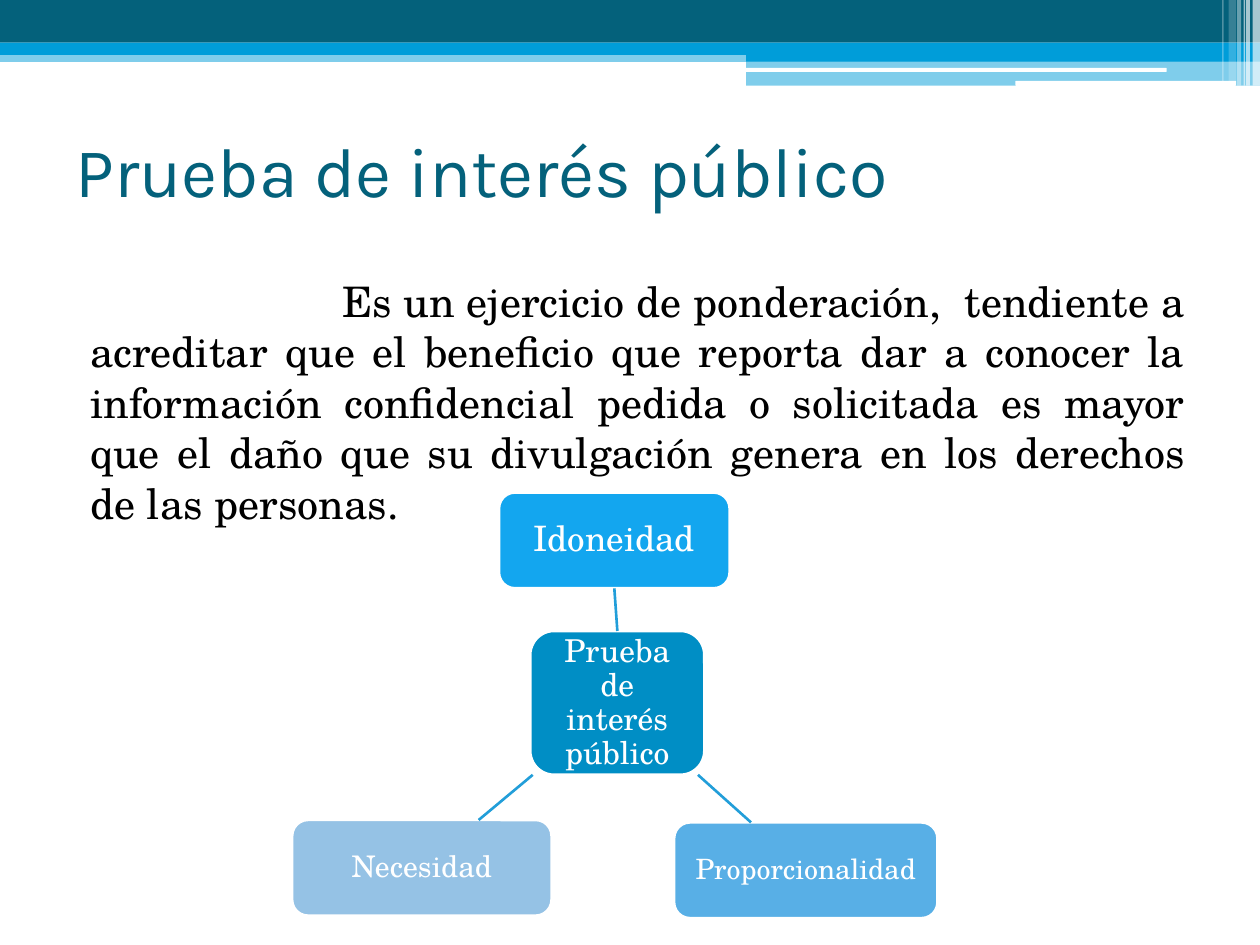
from dataclasses import dataclass

from lxml.etree import SubElement
from pptx import Presentation
from pptx.dml.color import RGBColor
from pptx.enum.shapes import MSO_CONNECTOR as Line, MSO_SHAPE as Shape
from pptx.enum.text import MSO_ANCHOR as Anchor, MSO_AUTO_SIZE as AutoSize, PP_ALIGN as Align
from pptx.oxml.ns import qn
from pptx.util import Cm, Pt


@dataclass(frozen=True)
class Theme:
    dark: str = "04617B"
    bright: str = "009DD9"
    white: str = "FFFFFF"
    ink: str = "000000"
    hub: str = "008EC5"
    suitability: str = "13A6EF"
    proportionality: str = "58AFE6"
    necessity: str = "95C2E5"
    link: str = "229ED9"
    heading_font: str = "Karla"
    body_font: str = "TeX Gyre Schola"
    title_size: int = 40
    body_size: int = 24
    line_width: float = 1.5


THEME = Theme()


def write(frame, text, *, size, color, font=THEME.body_font, align=Align.LEFT,
          anchor=Anchor.TOP, inset=None, line_spacing=None, before=0):
    frame.word_wrap = True
    frame.auto_size = AutoSize.NONE
    frame.vertical_anchor = anchor
    if inset is not None:
        frame.margin_left = frame.margin_right = Cm(inset)
        frame.margin_top = frame.margin_bottom = Cm(inset)
    paragraph = frame.paragraphs[0]
    paragraph.alignment = align
    paragraph.space_before = Pt(before)
    if line_spacing:
        paragraph.line_spacing = line_spacing
    run = paragraph.add_run()
    run.text = text
    run.font.name, run.font.size = font, Pt(size)
    run.font.color.rgb = RGBColor.from_string(color)
    return paragraph


def block(slide, kind, box, color, opacity=100, outline=None):
    part = slide.shapes.add_shape(kind, *map(Cm, box))
    part.shadow.inherit = False
    part.fill.solid()
    part.fill.fore_color.rgb = RGBColor.from_string(color)
    if opacity < 100:
        tint = part.fill._xPr.find(".//" + qn("a:srgbClr"))
        SubElement(tint, qn("a:alpha")).set("val", str(opacity * 1000))
    if outline:
        part.line.color.rgb = RGBColor.from_string(outline)
        part.line.width = Pt(THEME.line_width)
    else:
        part.line.fill.background()
    return part


def link(slide, start=(0, 0), end=(0, 0)):
    line = slide.shapes.add_connector(Line.STRAIGHT, *map(Cm, (*start, *end)))
    line.line.color.rgb = RGBColor.from_string(THEME.link)
    line.line.width = Pt(THEME.line_width)
    SubElement(line._element.spPr, qn("a:effectLst"))
    return line


def add_header(slide, left, top, width):
    right = left + width
    step = left + 15.04  # where the lower band begins
    # Full-width bands, then the deeper bands on the right
    for x, y, height, color, opacity in (
        (left, 1.02, 0.23, THEME.bright, 50),
        (left, 0, 0.86, THEME.dark, 100),
        (left, 0.86, 0.25, THEME.bright, 100),
        (step, 0.99, 0.25, THEME.bright, 100),
        (step, 1.22, 0.51, THEME.bright, 50),
    ):
        block(slide, Shape.RECTANGLE, (x, top + y, right - x, height), color, opacity)
    # White rules
    for x, y, length, height in ((15.01, 1.37, 8.51, 0.08), (20.47, 1.63, 4.45, 0.1)):
        block(slide, Shape.ROUNDED_RECTANGLE, (left + x, top + y, length, height), THEME.white)
    # Translucent stripes, measured from the right edge
    for offset, thickness, height, opacity in (
        (0.15, 0.15, 1.73, 65), (0.28, 0.08, 1.73, 65), (0.33, 0.03, 1.73, 60),
        (0.46, 0.08, 1.73, 40), (0.63, 0.15, 1.63, 20), (0.76, 0.03, 1.63, 30),
    ):
        block(slide, Shape.RECTANGLE, (right - offset, top, thickness, height),
              THEME.white, opacity)


def add_title(slide, left, top, width, height):
    title = slide.shapes.title
    title.left, title.top, title.width, title.height = map(Cm, (left, top, width, height))
    write(title.text_frame, "Prueba de interés público", size=THEME.title_size,
          color=THEME.dark, font=THEME.heading_font, anchor=Anchor.MIDDLE)


def add_definition(slide, left, top, width, height):
    definition = slide.shapes.add_textbox(*map(Cm, (left, top, width, height)))
    paragraph = write(
        definition.text_frame,
        "Es un ejercicio de ponderación,  tendiente a acreditar que el beneficio que "
        "reporta dar a conocer la información confidencial pedida o solicitada es mayor "
        "que el daño que su divulgación genera en los derechos de las personas.",
        size=THEME.body_size, color=THEME.ink, align=Align.JUSTIFY, before=3)
    # Left margin and deep first-line indent
    properties = paragraph._p.get_or_add_pPr()
    properties.set("marL", str(Cm(0.3)))
    properties.set("indent", str(Cm(5.08)))


def add_diagram(slide, left, top):
    def node(text, x, y, width, height, color, size, inset):
        part = block(slide, Shape.ROUNDED_RECTANGLE, (left + x, top + y, width, height),
                     color, outline=THEME.white)
        write(part.text_frame, text, size=size, color=THEME.white, align=Align.CENTER,
              anchor=Anchor.MIDDLE, inset=inset, line_spacing=0.9)
        return part

    # Centre and its three criteria
    hub = node("Prueba de interés público", 4.8, 2.79, 3.51, 2.9, THEME.hub, 18, 0.27)
    suitability = node("Idoneidad", 4.17, 0, 4.65, 1.93, THEME.suitability, 20, 0.25)
    node("Proporcionalidad", 7.7, 6.65, 5.31, 1.93, THEME.proportionality, 16, 0.2)
    node("Necesidad", 0, 6.6, 5.23, 1.93, THEME.necessity, 17, 0.22)

    # Links from the centre
    upward = link(slide)
    upward.begin_connect(hub, 0)
    upward.end_connect(suitability, 2)
    for x1, x2, y2 in ((8.18, 9.25, 6.65), (4.85, 3.76, 6.6)):
        link(slide, (left + x1, top + 5.69), (left + x2, top + y2))


def main():
    deck = Presentation()
    deck.slide_width, deck.slide_height = Cm(25.4), Cm(19.05)
    slide = deck.slides.add_slide(deck.slide_layouts[5])  # title only
    add_header(slide, 0, 0, 25.4)
    add_title(slide, 1.27, 1.93, 22.86, 2.97)
    add_definition(slide, 1.27, 5.43, 22.86, 12)
    add_diagram(slide, 5.89, 9.93)
    deck.save("out.pptx")


if __name__ == "__main__":
    main()
